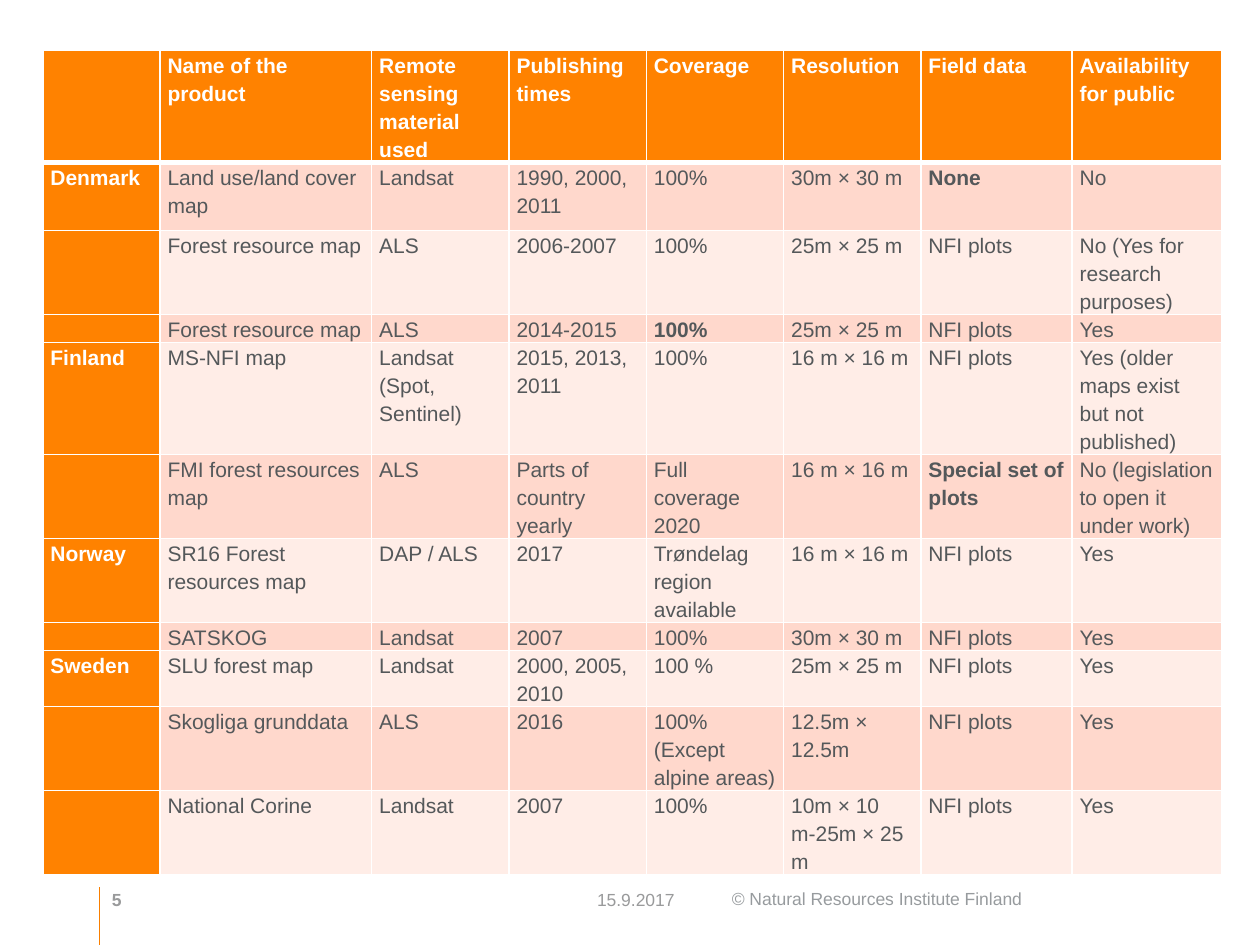
from lxml import etree
from pptx import Presentation
from pptx import util as u
from pptx.dml.color import RGBColor
from pptx.enum import shapes, text
from pptx.oxml import ns

COLORS = {
    "orange": "FF8200", "rule": "F97F00", "white": "FFFFFF", "body": "54585A",
    "dark_band": "FFD8CC", "light_band": "FFEDE7",
    "footer": "999A9B", "copyright": "979B9E",
}
COLUMN_WIDTHS = [0.93, 1.68, 1.09, 1.09, 1.09, 1.09, 1.2, 1.19]
ROW_HEIGHTS = [0.85, 0.54, 0.63, 0.21, 0.83, 0.62, 0.64, 0.21, 0.42, 0.51, 0.4]
PRODUCTS = [
    ["", "Name of the product", "Remote sensing material used", "Publishing times",
     "Coverage", "Resolution", "Field data", "Availability for public"],
    ["Denmark", "Land use/land cover map", "Landsat", "1990, 2000, 2011",
     "100%", "30m × 30 m", "None", "No"],
    ["", "Forest resource map", "ALS", "2006-2007",
     "100%", "25m × 25 m", "NFI plots", "No (Yes for research purposes)"],
    ["", "Forest resource map", "ALS", "2014-2015",
     "100%", "25m × 25 m", "NFI plots", "Yes"],
    ["Finland", "MS-NFI map", "Landsat (Spot, Sentinel)", "2015, 2013, 2011",
     "100%", "16 m × 16 m", "NFI plots", "Yes (older maps exist but not published)"],
    ["", "FMI forest resources map", "ALS", "Parts of country yearly",
     "Full coverage 2020", "16 m × 16 m", "Special set of plots",
     "No (legislation to open it under work)"],
    ["Norway", "SR16 Forest resources map", "DAP / ALS", "2017",
     "Trøndelag region available", "16 m × 16 m", "NFI plots", "Yes"],
    ["", "SATSKOG", "Landsat", "2007", "100%", "30m × 30 m", "NFI plots", "Yes"],
    ["Sweden", "SLU forest map", "Landsat", "2000, 2005, 2010",
     "100 %", "25m × 25 m", "NFI plots", "Yes"],
    ["", "Skogliga grunddata", "ALS", "2016",
     "100% (Except alpine areas)", "12.5m × 12.5m", "NFI plots", "Yes"],
    ["", "National Corine", "Landsat", "2007",
     "100%", "10m × 10 m-25m × 25 m", "NFI plots", "Yes"],
]
EMPHASIZED = {(1, 6), (3, 4), (5, 6)}


def rgb(name):
    """Return the named colour."""
    return RGBColor.from_string(COLORS[name])


def style_runs(paragraph, size, color, bold=False):
    """Format every run of a paragraph."""
    for run in paragraph.runs:
        run.font.name = "Arial"
        run.font.size = u.Pt(size)
        run.font.bold = bold
        run.font.color.rgb = rgb(color)


def set_borders(cell, row):
    """Draw white cell borders, thicker below the header row."""
    widths = {"L": 1, "R": 1, "T": 3 if row == 1 else 1, "B": 3 if row == 0 else 1}
    properties = cell._tc.get_or_add_tcPr()
    for position, (side, width) in enumerate(widths.items()):
        border = etree.Element(ns.qn(f"a:ln{side}"), w=str(u.Pt(width)))
        fill = etree.SubElement(border, ns.qn("a:solidFill"))
        etree.SubElement(fill, ns.qn("a:srgbClr"), val=COLORS["white"])
        properties.insert(position, border)


def fill_cell(cell, content, row, column):
    """Write and format one table cell."""
    heading = row == 0 or column == 0
    cell.margin_left = cell.margin_right = u.Inches(0.06)
    cell.margin_top = cell.margin_bottom = 0
    cell.fill.solid()
    band = "dark_band" if row % 2 else "light_band"
    cell.fill.fore_color.rgb = rgb("orange" if heading else band)
    set_borders(cell, row)
    paragraph = cell.text_frame.paragraphs[0]
    paragraph.line_spacing = u.Pt(16)
    if not content:
        etree.SubElement(paragraph._p, ns.qn("a:endParaRPr"), sz="1200")
        return
    paragraph.text = content
    if row == 0:
        paragraph.space_after = u.Pt(10)
    style_runs(paragraph, 12, "white" if heading else "body",
               heading or (row, column) in EMPHASIZED)


def add_product_table(slide):
    """Add the table of forest map products."""
    products = slide.shapes.add_table(
        len(PRODUCTS), len(COLUMN_WIDTHS), u.Inches(0.34), u.Inches(0.4),
        u.Inches(sum(COLUMN_WIDTHS)), u.Inches(sum(ROW_HEIGHTS))).table
    products.first_col = True
    for column, width in zip(products.columns, COLUMN_WIDTHS):
        column.width = u.Inches(width)
    for row, height in zip(products.rows, ROW_HEIGHTS):
        row.height = u.Inches(height)
    for row, contents in enumerate(PRODUCTS):
        for column, content in enumerate(contents):
            fill_cell(products.cell(row, column), content, row, column)


def add_footer_text(slide, content, left, width, color="footer", bold=False,
                    anchor=text.MSO_ANCHOR.BOTTOM, top_margin=0.05):
    """Add one piece of footer text."""
    footer = slide.shapes.add_textbox(
        u.Inches(left), u.Inches(6.97), u.Inches(width), u.Inches(0.3))
    frame = footer.text_frame
    frame.word_wrap = True
    frame.vertical_anchor = anchor
    frame.margin_top = u.Inches(top_margin)
    frame.text = content
    style_runs(frame.paragraphs[0], 10, color, bold)


def add_footer_rule(slide):
    """Add the vertical rule beside the page number."""
    rule = slide.shapes.add_connector(
        shapes.MSO_CONNECTOR.STRAIGHT, u.Inches(0.79), u.Inches(7.04),
        u.Inches(0.79), u.Inches(7.5))
    rule.line.color.rgb = rgb("rule")
    rule.line.width = u.Pt(1)
    etree.SubElement(rule._element.spPr, ns.qn("a:effectLst"))
    rule._element.remove(rule._element.find(ns.qn("p:style")))


def main():
    """Build and save the slide."""
    deck = Presentation()
    deck.slide_width, deck.slide_height = u.Inches(10), u.Inches(7.5)
    slide = deck.slides.add_slide(deck.slide_layouts[6])
    add_footer_rule(slide)
    add_footer_text(slide, "© Natural Resources Institute Finland", 5.71, 2.59,
                    "copyright", anchor=text.MSO_ANCHOR.TOP, top_margin=0.08)
    add_footer_text(slide, "5", 0.79, 0.49, bold=True)
    add_footer_text(slide, "15.9.2017", 4.64, 1.1)
    add_product_table(slide)
    deck.save("out.pptx")


if __name__ == "__main__":
    main()
